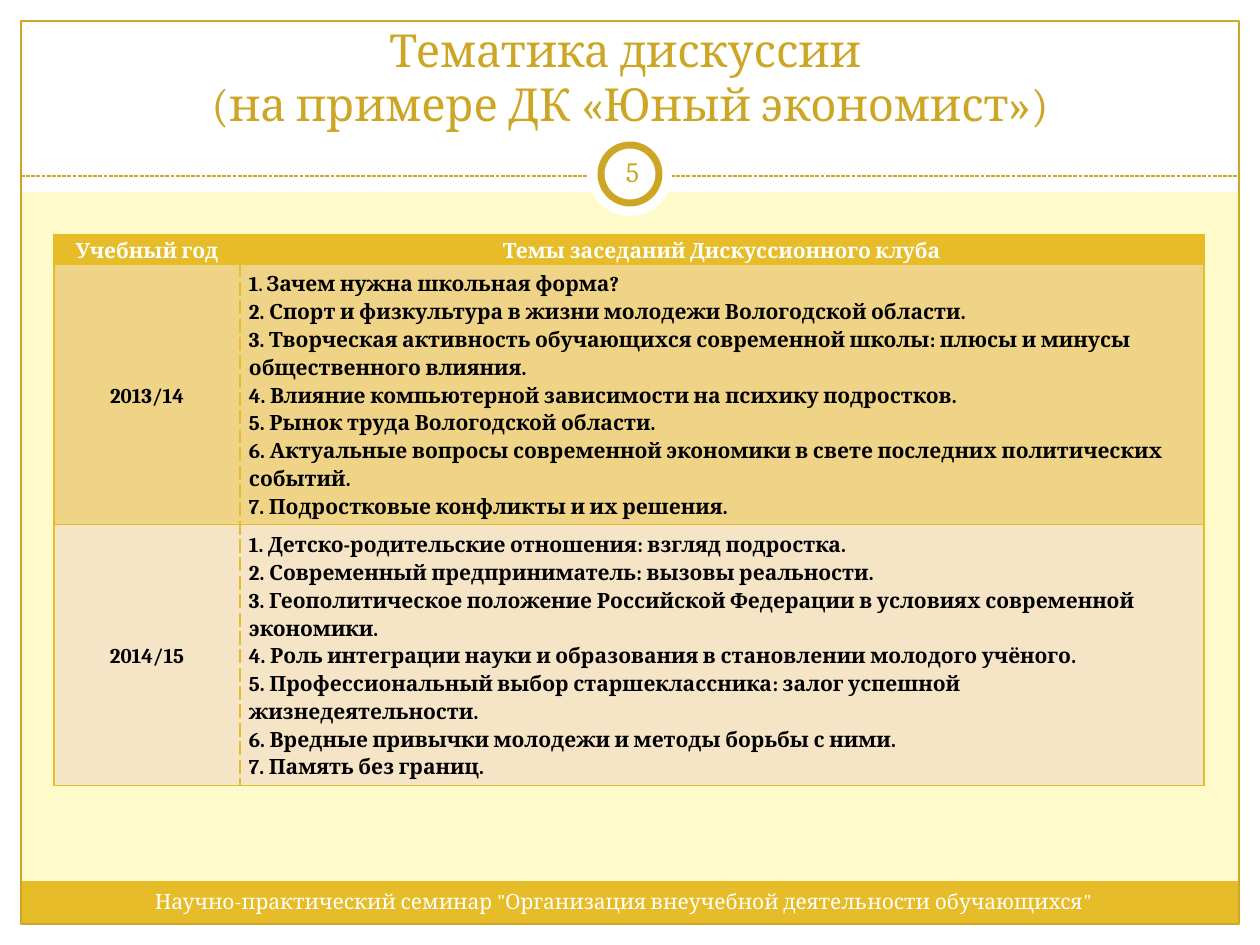
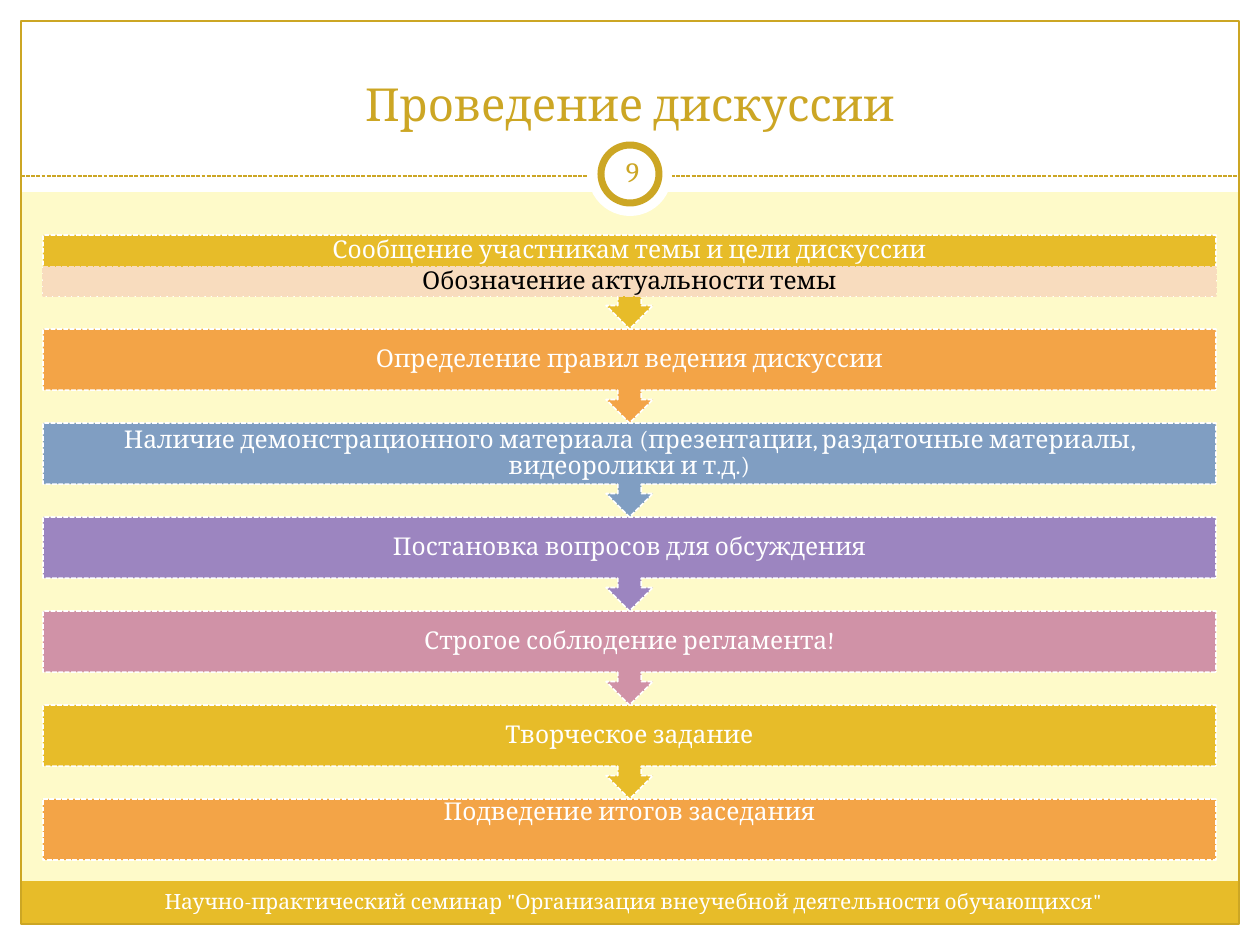
from lxml import etree
from pptx import Presentation
from pptx import util as u
from pptx.dml.color import RGBColor
from pptx.enum import dml, shapes, text
from pptx.oxml import ns

CREAM = RGBColor(0xFE, 0xFA, 0xC9)
WHITE = RGBColor(0xFF, 0xFF, 0xFF)
BLACK = RGBColor(0x00, 0x00, 0x00)
GOLD = RGBColor(0xE7, 0xBC, 0x29)
DARK_GOLD = RGBColor(0xCC, 0xA6, 0x24)
SAND = RGBColor(0xEF, 0xD3, 0x87)
PALE_SAND = RGBColor(0xF5, 0xE4, 0xC6)
PEACH = RGBColor(0xF8, 0xDC, 0xBE)
ORANGE = RGBColor(0xF3, 0xA4, 0x47)
BLUE = RGBColor(0x80, 0x9E, 0xC2)
VIOLET = RGBColor(0x9C, 0x85, 0xC0)
PINK = RGBColor(0xD0, 0x92, 0xA7)

FONT = "Cambria"
WIDTH, HEIGHT = 1260, 945
MARGIN, HEADER_HEIGHT = 21, 192
SEMINAR = 'Научно-практический семинар "Организация внеучебной деятельности обучающихся"'

HEADINGS = ["Учебный год", "Темы заседаний Дискуссионного клуба"]
YEARS = [
    ("2013/14", SAND, [
        "1. Зачем нужна школьная форма?",
        "2. Спорт и физкультура в жизни молодежи Вологодской области.",
        "3. Творческая активность обучающихся современной школы: плюсы и минусы общественного влияния.",
        "4. Влияние компьютерной зависимости на психику подростков.",
        "5. Рынок труда Вологодской области.",
        "6. Актуальные вопросы современной экономики в свете последних политических событий.",
        "7. Подростковые конфликты и их решения.",
    ]),
    ("2014/15", PALE_SAND, [
        "1. Детско-родительские отношения: взгляд подростка.",
        "2. Современный предприниматель: вызовы реальности.",
        "3. Геополитическое положение Российской Федерации в условиях современной экономики.",
        "4. Роль интеграции науки и образования в становлении молодого учёного.",
        "5. Профессиональный выбор старшеклассника: залог успешной жизнедеятельности.",
        "6. Вредные привычки молодежи и методы борьбы с ними.",
        "7. Память без границ.",
    ]),
]

STEP_LEFT, STEP_TOP, STEP_WIDTH = 43, 235, 1173
STEP_PITCH, STEP_BODY = 94, 61
TOPIC_HEIGHT, RELEVANCE_HEIGHT = 32, 29
STEPS = [
    ("Сообщение участникам темы и цели дискуссии", GOLD, TOPIC_HEIGHT),
    ("Определение правил ведения дискуссии", ORANGE, STEP_BODY),
    ("Наличие демонстрационного материала (презентации, раздаточные материалы, видеоролики и т.д.)",
     BLUE, STEP_BODY),
    ("Постановка вопросов для обсуждения", VIOLET, STEP_BODY),
    ("Строгое соблюдение регламента!", PINK, STEP_BODY),
    ("Творческое задание", GOLD, STEP_BODY),
    ("Подведение итогов заседания", ORANGE, 28),
]


def px(length):
    return u.Emu(round(length * 914400 / 126))


class Deck:
    def __init__(self):
        self.prs = Presentation()
        self.prs.slide_width, self.prs.slide_height = px(WIDTH), px(HEIGHT)
        self.slide = None

    def outline(self, line, color, width, dashed):
        if color is None:
            line.fill.background()
            return
        line.color.rgb = color
        line.width = u.Pt(width)
        if dashed:
            line.dash_style = dml.MSO_LINE.SQUARE_DOT

    def shape(self, kind, box, fill=None, line=None, width=0.75, dashed=False):
        shape = self.slide.shapes.add_shape(kind, *map(px, box))
        shape.shadow.inherit = False
        if fill is None:
            shape.fill.background()
        else:
            shape.fill.solid()
            shape.fill.fore_color.rgb = fill
        self.outline(shape.line, line, width, dashed)
        return shape

    def rect(self, box, fill=None, line=None, **style):
        return self.shape(shapes.MSO_SHAPE.RECTANGLE, box, fill, line, **style)

    def rule(self, left, right, y):
        rule = self.slide.shapes.add_connector(
            shapes.MSO_CONNECTOR.STRAIGHT, px(left), px(y), px(right), px(y))
        self.outline(rule.line, DARK_GOLD, 0.75, True)
        etree.SubElement(rule._element.spPr, ns.qn("a:effectLst"))

    def set_text(self, paragraph, words, size, color, bold=False, spacing=None,
                 align=text.PP_ALIGN.CENTER):
        paragraph.text = words
        paragraph.alignment = align
        paragraph.line_spacing = spacing
        font = paragraph.font
        font.name, font.size, font.bold = FONT, u.Pt(size), bold
        font.color.rgb = color

    def label(self, box, words, size, color, anchor=text.MSO_ANCHOR.MIDDLE,
              inset=(13, 6), spacing=None):
        frame = self.slide.shapes.add_textbox(*map(px, box)).text_frame
        frame.word_wrap = True
        frame.vertical_anchor = anchor
        frame.margin_left = frame.margin_right = px(inset[0])
        frame.margin_top = frame.margin_bottom = px(inset[1])
        self.set_text(frame.paragraphs[0], words, size, color, spacing=spacing)

    def page(self, title, title_box, number, footer_width):
        self.slide = self.prs.slides.add_slide(self.prs.slide_layouts[6])
        background = self.slide.background.fill
        background.solid()
        background.fore_color.rgb = CREAM
        inner_width, inner_height = WIDTH - 2 * MARGIN, HEIGHT - 2 * MARGIN
        for band in [(0, HEIGHT - MARGIN, WIDTH, MARGIN), (0, 0, WIDTH, HEADER_HEIGHT),
                     (0, 0, MARGIN, HEIGHT), (WIDTH - MARGIN, 0, MARGIN, HEIGHT)]:
            self.rect(band, WHITE)
        self.rect((MARGIN, 881, inner_width, 43), GOLD)
        self.rect((MARGIN, MARGIN, inner_width, inner_height), line=DARK_GOLD)
        self.rule(MARGIN, WIDTH - MARGIN, 176)
        self.shape(shapes.MSO_SHAPE.OVAL, (588, 132, 84, 84), WHITE)
        self.shape(shapes.MSO_SHAPE.OVAL, (601, 145, 58, 58), WHITE, DARK_GOLD, width=4)
        self.label(title_box, title, 26, DARK_GOLD, text.MSO_ANCHOR.BOTTOM)
        self.label((42, 883, footer_width, 50), SEMINAR, 12, WHITE, text.MSO_ANCHOR.TOP)
        self.label((601, 141, 63, 60), number, 16, DARK_GOLD, inset=(6, 6))

    def table(self, left, top, columns, rows):
        grid = self.slide.shapes.add_table(
            len(rows), len(columns), px(left), px(top), px(sum(columns)), px(sum(rows))).table
        grid.first_row = grid.horz_banding = False
        for column, width in zip(grid.columns, columns):
            column.width = px(width)
        for row, height in zip(grid.rows, rows):
            row.height = px(height)
        return grid

    def cell(self, cell, lines, fill, color, align=text.PP_ALIGN.CENTER, dashed_side=None):
        cell.fill.solid()
        cell.fill.fore_color.rgb = fill
        cell.vertical_anchor = text.MSO_ANCHOR.MIDDLE
        cell.margin_left = cell.margin_right = px(9)
        cell.margin_top = cell.margin_bottom = 0
        frame = cell.text_frame
        for index, words in enumerate(lines):
            paragraph = frame.add_paragraph() if index else frame.paragraphs[0]
            self.set_text(paragraph, words, 12, color, True, 1.15, align)
        properties = cell._tc.get_or_add_tcPr()
        for index, side in enumerate(["lnL", "lnR", "lnT", "lnB"]):
            dashed = side == dashed_side
            border = etree.Element(ns.qn("a:" + side), w=str(u.Pt(0.9 if dashed else 0.75)))
            paint = etree.SubElement(border, ns.qn("a:solidFill"))
            etree.SubElement(paint, ns.qn("a:srgbClr"), val=str(GOLD))
            etree.SubElement(border, ns.qn("a:prstDash"), val="sysDash" if dashed else "solid")
            properties.insert(index, border)


def topics_slide(deck):
    deck.page("Тематика дискуссии \v(на примере ДК «Юный экономист»)",
              (25, 32, 1211, 105), "5", 1163)
    topics = deck.table(54, 235, [186, 964], [28, 250, 250])
    for column, heading in enumerate(HEADINGS):
        deck.cell(topics.cell(0, column), [heading], GOLD, WHITE)
    for row, (year, fill, themes) in enumerate(YEARS, 1):
        deck.cell(topics.cell(row, 0), [year], fill, BLACK, dashed_side="lnR")
        deck.cell(topics.cell(row, 1), themes, fill, BLACK, text.PP_ALIGN.LEFT, "lnL")
    first_theme = topics.cell(1, 1).text_frame.paragraphs[0]
    first_theme.text = "1"
    for words, size in [(". ", 10), ("Зачем нужна школьная форма?", 12)]:
        run = first_theme.add_run()
        run.text = words
        run.font.size = u.Pt(size)


def steps_slide(deck):
    deck.page("Проведение дискуссии", (42, 32, 1176, 105), "9", 1183)
    dashes = dict(width=0.9, dashed=True)
    for index, (step, color, text_height) in reversed(list(enumerate(STEPS))):
        top = STEP_TOP + index * STEP_PITCH
        if index == len(STEPS) - 1:
            deck.rect((STEP_LEFT, top, STEP_WIDTH, STEP_BODY), color, WHITE, **dashes)
        else:
            callout = deck.shape(shapes.MSO_SHAPE.UP_ARROW_CALLOUT,
                                 (STEP_LEFT, top, STEP_WIDTH, STEP_PITCH), color, WHITE, **dashes)
            callout.rotation = 180
        deck.label((STEP_LEFT, top, STEP_WIDTH, text_height), step, 14, WHITE,
                   inset=(14, 0), spacing=0.9)
    relevance = (STEP_LEFT, STEP_TOP + TOPIC_HEIGHT, STEP_WIDTH, RELEVANCE_HEIGHT)
    deck.rect(relevance, PEACH, PEACH, **dashes)
    deck.label(relevance, "Обозначение актуальности темы", 14, BLACK, inset=(14, 0), spacing=0.9)


def main():
    deck = Deck()
    topics_slide(deck)
    steps_slide(deck)
    deck.prs.save("out.pptx")


if __name__ == "__main__":
    main()
